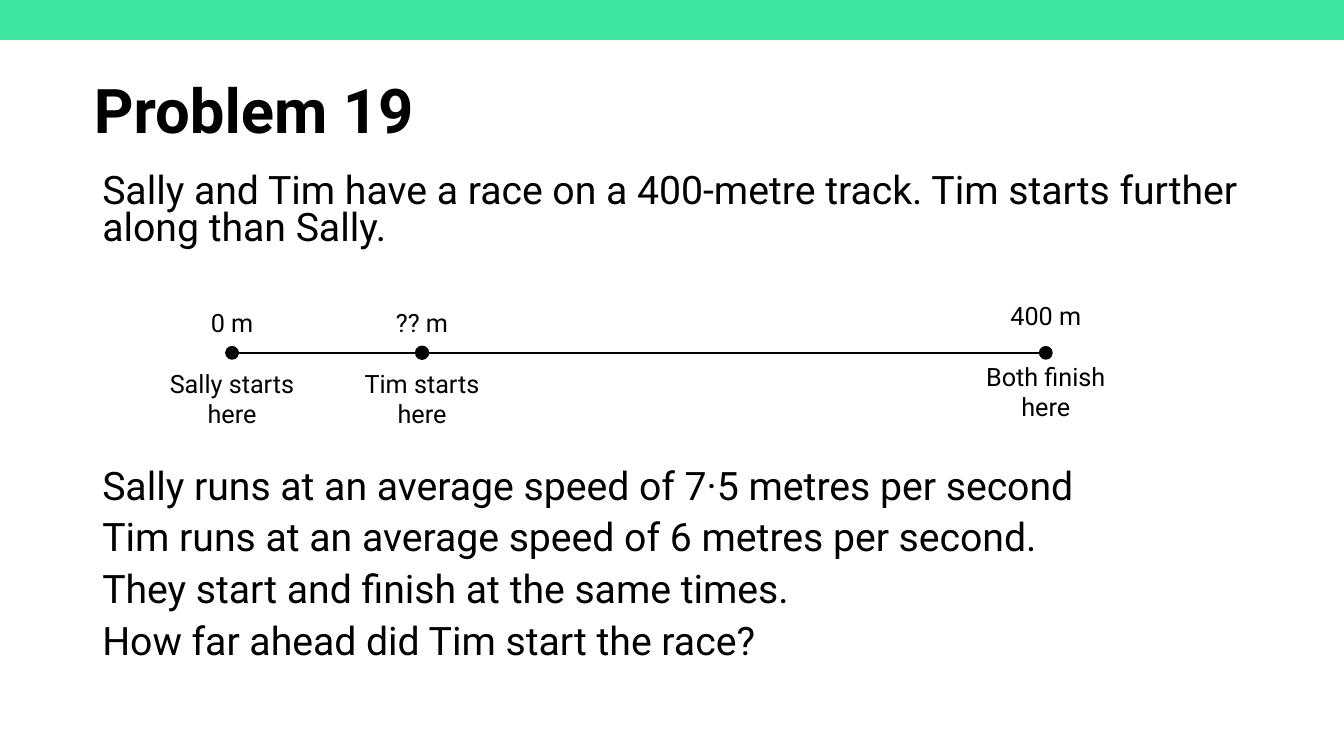
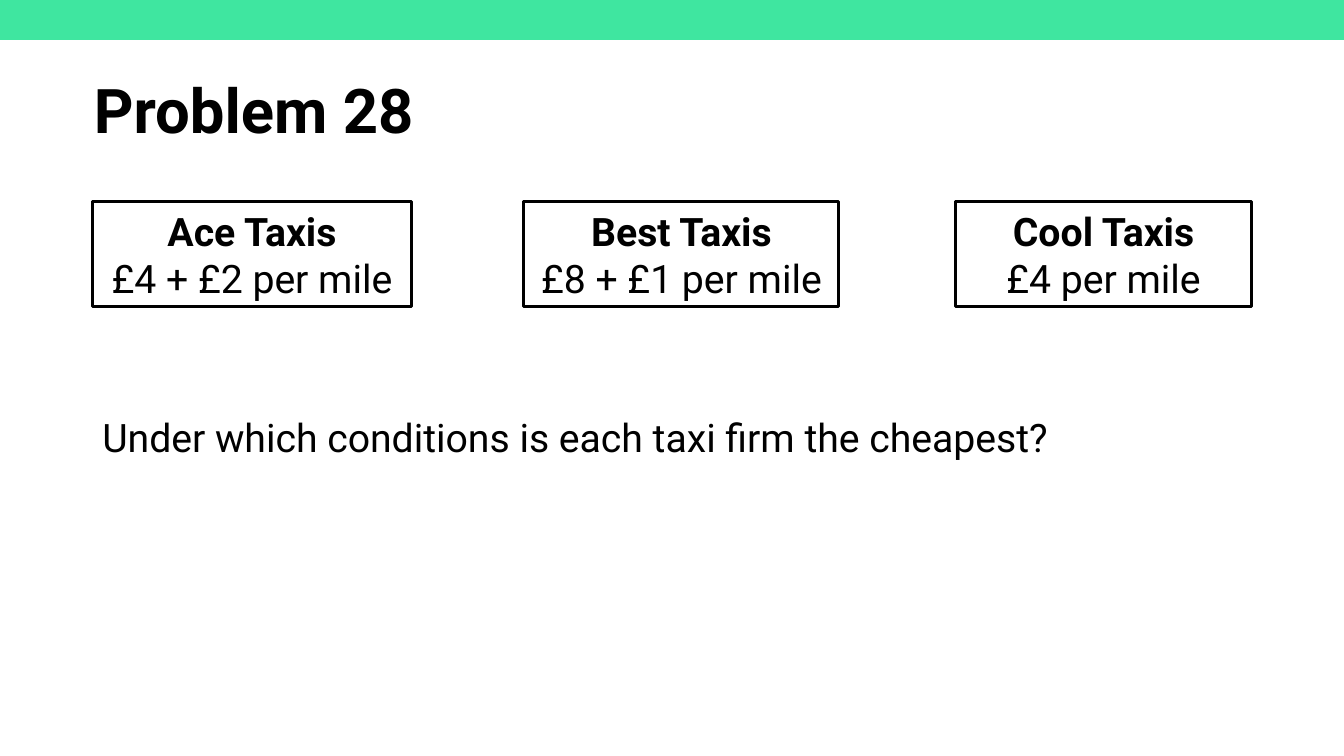
from dataclasses import dataclass

from lxml.etree import SubElement
from pptx import Presentation
from pptx.dml.color import RGBColor
from pptx.enum.shapes import MSO_CONNECTOR, MSO_SHAPE
from pptx.enum.text import MSO_ANCHOR, PP_ALIGN
from pptx.oxml.ns import qn
from pptx.shapes.autoshape import Shape
from pptx.slide import Slide
from pptx.text.text import TextFrame
from pptx.util import Emu, Pt

EMU_PER_PX = 9525
SLIDE_WIDTH, SLIDE_HEIGHT = 1280, 720
FONT = "Roboto"
COLOURS = {"band": "3FE6A0", "ink": "000000"}


@dataclass(frozen=True)
class Box:
    left: int
    top: int
    width: int
    height: int


@dataclass(frozen=True)
class TextStyle:
    size: int
    bold: bool = False
    align: PP_ALIGN = PP_ALIGN.LEFT
    line_spacing: float = 1.0
    space_before: int = 0


@dataclass(frozen=True)
class TrackPoint:
    x: int
    distance: str
    caption: str
    raised: int = 0


@dataclass(frozen=True)
class TaxiFirm:
    name: str
    fare: str
    width: int


BAND = Box(0, 0, SLIDE_WIDTH, 38)
TITLE_BOX = Box(80, 39, 1104, 139)
TITLE = TextStyle(44, bold=True, line_spacing=0.9)
BODY_LEFT, BODY_WIDTH = 88, 1104
TIGHT_BODY = TextStyle(28, line_spacing=0.8, space_before=10)
BODY = TextStyle(28, line_spacing=0.9)
LABEL = TextStyle(18, align=PP_ALIGN.CENTER)
FIRM = TextStyle(28, align=PP_ALIGN.CENTER)

TRACK_Y, DOT_SIZE, LABEL_WIDTH = 336, 12, 144
DISTANCE_TOP, CAPTION_TOP = 293, 351
START, TIM, FINISH = TRACK_POINTS = (
    TrackPoint(221, "0 m", "Sally starts here"),
    TrackPoint(402, "?? m", "Tim starts here"),
    TrackPoint(996, "400 m", "Both finish here", raised=7),
)

FIRM_TOP, FIRM_HEIGHT, FIRM_PITCH = 192, 100, 411
TAXI_FIRMS = (
    TaxiFirm("Ace Taxis", "£4 + £2 per mile", 304),
    TaxiFirm("Best Taxis", "£8 + £1 per mile", 300),
    TaxiFirm("Cool Taxis", "£4 per mile", 282),
)


def px(length: int) -> Emu:
    return Emu(length * EMU_PER_PX)


def place(box: Box) -> tuple[Emu, Emu, Emu, Emu]:
    return px(box.left), px(box.top), px(box.width), px(box.height)


def colour(name: str) -> RGBColor:
    return RGBColor.from_string(COLOURS[name])


def write(text_frame: TextFrame, lines: list[str], style: TextStyle) -> None:
    text_frame.word_wrap = True
    text_frame.text = "\n".join(lines)
    for index, paragraph in enumerate(text_frame.paragraphs):
        paragraph.alignment = style.align
        paragraph.line_spacing = style.line_spacing
        paragraph.space_before = Pt(style.space_before if index else 0)
        for run in paragraph.runs:
            run.font.name = FONT
            run.font.size = Pt(style.size)
            run.font.bold = style.bold
            run.font.color.rgb = colour("ink")


def add_text(slide: Slide, box: Box, lines: list[str], style: TextStyle) -> TextFrame:
    text_frame = slide.shapes.add_textbox(*place(box)).text_frame
    write(text_frame, lines, style)
    return text_frame


def add_shape(
    slide: Slide, kind: MSO_SHAPE, box: Box, fill: str | None = None, outline: float = 0
) -> Shape:
    shape = slide.shapes.add_shape(kind, *place(box))
    shape.shadow.inherit = False
    if fill:
        shape.fill.solid()
        shape.fill.fore_color.rgb = colour(fill)
    else:
        shape.fill.background()
    if outline:
        shape.line.color.rgb = colour("ink")
        shape.line.width = Pt(outline)
    else:
        shape.line.fill.background()
    return shape


def add_problem_slide(presentation: Presentation, title: str) -> Slide:
    slide = presentation.slides.add_slide(presentation.slide_layouts[6])
    add_shape(slide, MSO_SHAPE.RECTANGLE, BAND, fill="band")
    text_frame = add_text(slide, TITLE_BOX, [title], TITLE)
    text_frame.vertical_anchor = MSO_ANCHOR.MIDDLE
    return slide


def add_track_label(slide: Slide, x: int, top: int, height: int, text: str) -> None:
    box = Box(x - LABEL_WIDTH // 2, top, LABEL_WIDTH, height)
    text_frame = add_text(slide, box, [text], LABEL)
    text_frame.margin_left = text_frame.margin_right = 0
    text_frame.margin_top = text_frame.margin_bottom = 0


def add_track(slide: Slide) -> None:
    track = slide.shapes.add_connector(
        MSO_CONNECTOR.STRAIGHT, px(START.x), px(TRACK_Y), px(FINISH.x), px(TRACK_Y)
    )
    track.line.color.rgb = colour("ink")
    track.line.width = Pt(1.25)
    properties = track._element.spPr
    line = properties.find(qn("a:ln"))
    for end in ("a:headEnd", "a:tailEnd"):
        SubElement(line, qn(end), type="oval", w="lg", len="lg")
    SubElement(properties, qn("a:effectLst"))

    radius = DOT_SIZE // 2
    dot = Box(TIM.x - radius, TRACK_Y - radius, DOT_SIZE, DOT_SIZE)
    add_shape(slide, MSO_SHAPE.OVAL, dot, fill="ink", outline=1.25)
    for point in TRACK_POINTS:
        add_track_label(slide, point.x, DISTANCE_TOP - point.raised, 30, point.distance)
        add_track_label(slide, point.x, CAPTION_TOP - point.raised, 58, point.caption)


def build_race_slide(presentation: Presentation) -> None:
    slide = add_problem_slide(presentation, "Problem 19")
    introduction = [
        "Sally and Tim have a race on a 400-metre track. "
        "Tim starts further along than Sally."
    ]
    question = [
        "Sally runs at an average speed of 7·5 metres per second",
        "Tim runs at an average speed of 6 metres per second.",
        "They start and finish at the same times.",
        "How far ahead did Tim start the race?",
    ]
    add_text(slide, Box(BODY_LEFT, 161, BODY_WIDTH, 84), introduction, TIGHT_BODY)
    add_track(slide)
    add_text(slide, Box(BODY_LEFT, 443, BODY_WIDTH, 206), question, TIGHT_BODY)


def build_taxi_slide(presentation: Presentation) -> None:
    slide = add_problem_slide(presentation, "Problem 28")
    for index, firm in enumerate(TAXI_FIRMS):
        box = Box(BODY_LEFT + index * FIRM_PITCH, FIRM_TOP, firm.width, FIRM_HEIGHT)
        shape = add_shape(slide, MSO_SHAPE.RECTANGLE, box, outline=2.25)
        write(shape.text_frame, [firm.name, firm.fare], FIRM)
        shape.text_frame.paragraphs[0].runs[0].font.bold = True
    question = ["Under which conditions is each taxi firm the cheapest?"]
    add_text(slide, Box(BODY_LEFT, 394, BODY_WIDTH, 60), question, BODY)


def main() -> None:
    presentation = Presentation()
    presentation.slide_width = px(SLIDE_WIDTH)
    presentation.slide_height = px(SLIDE_HEIGHT)
    build_race_slide(presentation)
    build_taxi_slide(presentation)
    presentation.save("out.pptx")


if __name__ == "__main__":
    main()
